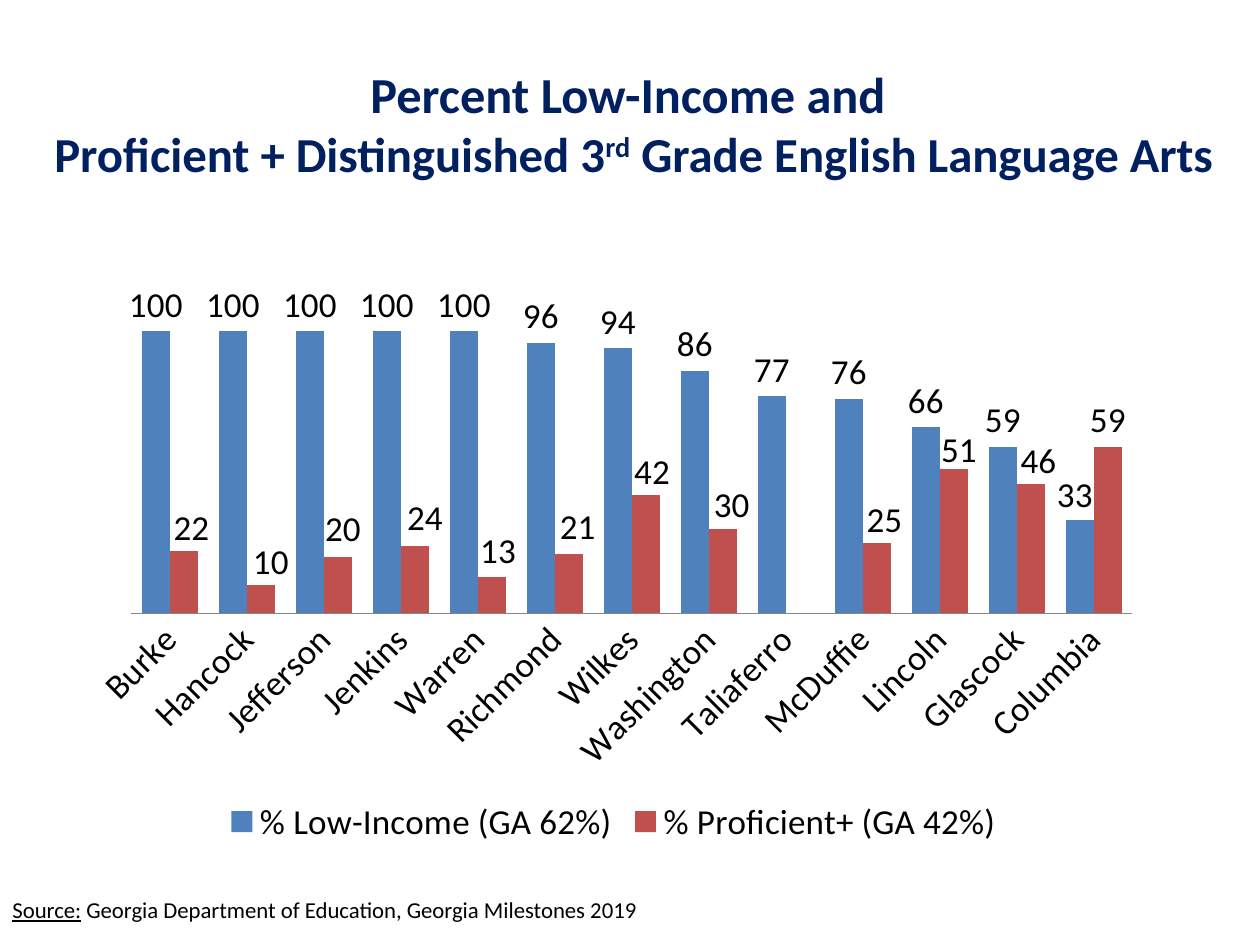
from dataclasses import dataclass

from lxml import etree
from pptx import Presentation
from pptx import util as u
from pptx.chart.data import CategoryChartData
from pptx.dml.color import RGBColor
from pptx.enum import chart as ch
from pptx.enum import text
from pptx.oxml.ns import qn

PX = u.Inches(1) // 100
FONT = "Calibri"
NAVY = RGBColor(0x00, 0x20, 0x60)
BLACK = RGBColor(0x00, 0x00, 0x00)
GRAY = RGBColor(0x86, 0x86, 0x86)
BLUE = RGBColor(0x4F, 0x81, 0xBD)
RED = RGBColor(0xC0, 0x50, 0x4D)

CHART_W, CHART_H = 858, 467
COUNTIES = ("Burke", "Hancock", "Jefferson", "Jenkins", "Warren", "Richmond", "Wilkes",
            "Washington", "Taliaferro", "McDuffie", "Lincoln", "Glascock", "Columbia")


@dataclass(frozen=True)
class Measure:
    name: str
    color: RGBColor
    values: tuple
    label_shifts: dict  # point index -> (right, down) in px


MEASURES = (
    Measure("% Low-Income (GA 62%)", BLUE,
            (100, 100, 100, 100, 100, 96, 94, 86, 77, 76, 66, 59, 33),
            {12: (-4, 1)}),
    Measure("% Proficient+ (GA 42%)", RED,
            (22, 10, 20, 24, 13, 21, 42, 30, None, 25, 51, 46, 59),
            {0: (6, 3), 1: (8, 3), 2: (4, -1), 3: (8, -1), 4: (5, 1), 5: (7, 0),
             6: (5, 3), 7: (7, 2), 9: (6, 3), 10: (4, 6), 11: (6, 3)}),
)


def place(shape, left: int, top: int, width: int, height: int) -> None:
    shape.left, shape.top = left * PX, top * PX
    shape.width, shape.height = width * PX, height * PX


def add_span(para, words: str, size: float, color: RGBColor,
             bold: bool = False, underline: bool = False):
    span = para.add_run()
    span.text = words
    font = span.font
    font.name, font.size, font.bold = FONT, u.Pt(size), bold
    font.underline = underline
    font.color.rgb = color
    return span


def manual_layout(**settings):
    """Return a c:layout element; settings must follow schema order."""
    layout = etree.Element(qn("c:layout"))
    manual = etree.SubElement(layout, qn("c:manualLayout"))
    for tag, value in settings.items():
        etree.SubElement(manual, qn(f"c:{tag}")).set("val", str(value))
    return layout


def write_title(title) -> None:
    place(title, 25, 25, 956, 145)
    frame = title.text_frame
    frame.auto_size = text.MSO_AUTO_SIZE.NONE
    frame.vertical_anchor = text.MSO_ANCHOR.MIDDLE
    para = frame.paragraphs[0]
    para.alignment = text.PP_ALIGN.CENTER
    add_span(para, "Percent Low-Income and ", 28.8, NAVY, bold=True)
    para.add_line_break()
    add_span(para, "Proficient + Distinguished 3", 27.9, NAVY, bold=True)
    ordinal = add_span(para, "rd", 27.9, NAVY, bold=True)
    ordinal.font._element.set("baseline", "30000")
    add_span(para, " Grade English Language Arts", 27.9, NAVY, bold=True)


def add_source(page) -> None:
    box = page.shapes.add_textbox(0, 714 * PX, 875 * PX, 25 * PX)
    box.text_frame.word_wrap = True
    para = box.text_frame.paragraphs[0]
    para.line_spacing = 0.6
    para.space_before = u.Pt(6.5)
    add_span(para, "Source:", 13, BLACK, underline=True)
    add_span(para, " Georgia Department of Education, Georgia Milestones 2019", 13, BLACK)


def format_axes(chart) -> None:
    counties, percent = chart.category_axis, chart.value_axis
    counties.major_tick_mark = ch.XL_TICK_MARK.NONE
    counties.has_major_gridlines = False
    counties.format.line.color.rgb = GRAY
    counties.tick_labels.font.size = u.Pt(20)
    chart.element.xpath(".//c:catAx/c:txPr/a:bodyPr")[0].set("rot", "-2700000")
    percent.minimum_scale, percent.maximum_scale = 0, 120
    percent.has_major_gridlines = False
    percent.visible = False


def format_series(chart, index: int, measure: Measure) -> None:
    series = chart.plots[0].series[index]
    series.format.fill.solid()
    series.format.fill.fore_color.rgb = measure.color
    series.invert_if_negative = False
    labels = series.data_labels
    labels.show_value = True
    labels.number_format, labels.number_format_is_linked = "0", False
    labels.position = ch.XL_LABEL_POSITION.OUTSIDE_END
    for point in measure.label_shifts:
        series.points[point].data_label.position = ch.XL_LABEL_POSITION.OUTSIDE_END
    moved = chart.element.xpath(f".//c:ser[c:idx/@val='{index}']/c:dLbls/c:dLbl")
    for label, (right, down) in zip(moved, measure.label_shifts.values()):
        label.insert(1, manual_layout(x=round(right / CHART_W, 4),
                                      y=round(down / CHART_H, 4)))


def add_county_chart(page) -> None:
    data = CategoryChartData(number_format="0")
    data.categories = COUNTIES
    for measure in MEASURES:
        data.add_series(measure.name, measure.values)
    chart = page.shapes.add_chart(ch.XL_CHART_TYPE.COLUMN_CLUSTERED, 58 * PX, 208 * PX,
                                  CHART_W * PX, CHART_H * PX, data).chart
    chart.has_title = False
    chart.font.name, chart.font.size = FONT, u.Pt(20)
    chart.font.color.rgb = BLACK
    chart.has_legend = True
    chart.legend.position = ch.XL_LEGEND_POSITION.BOTTOM
    chart.legend.include_in_layout = False
    plot = chart.plots[0]
    plot.gap_width, plot.overlap = 75, 0
    plot.vary_by_categories = False
    format_axes(chart)
    for index, measure in enumerate(MEASURES):
        format_series(chart, index, measure)
    area = chart.element.xpath(".//c:plotArea")[0]
    for layout in area.findall(qn("c:layout")):
        area.remove(layout)
    area.insert(0, manual_layout(layoutTarget="inner", xMode="edge", yMode="edge",
                                 x=0.054, y=0.022, w=0.926, h=0.575))


def main() -> None:
    deck = Presentation()
    deck.slide_width, deck.slide_height = 1000 * PX, 750 * PX
    page = deck.slides.add_slide(deck.slide_layouts.get_by_name("Title Only"))
    write_title(page.shapes.title)
    add_source(page)
    add_county_chart(page)
    deck.save("out.pptx")


if __name__ == "__main__":
    main()
